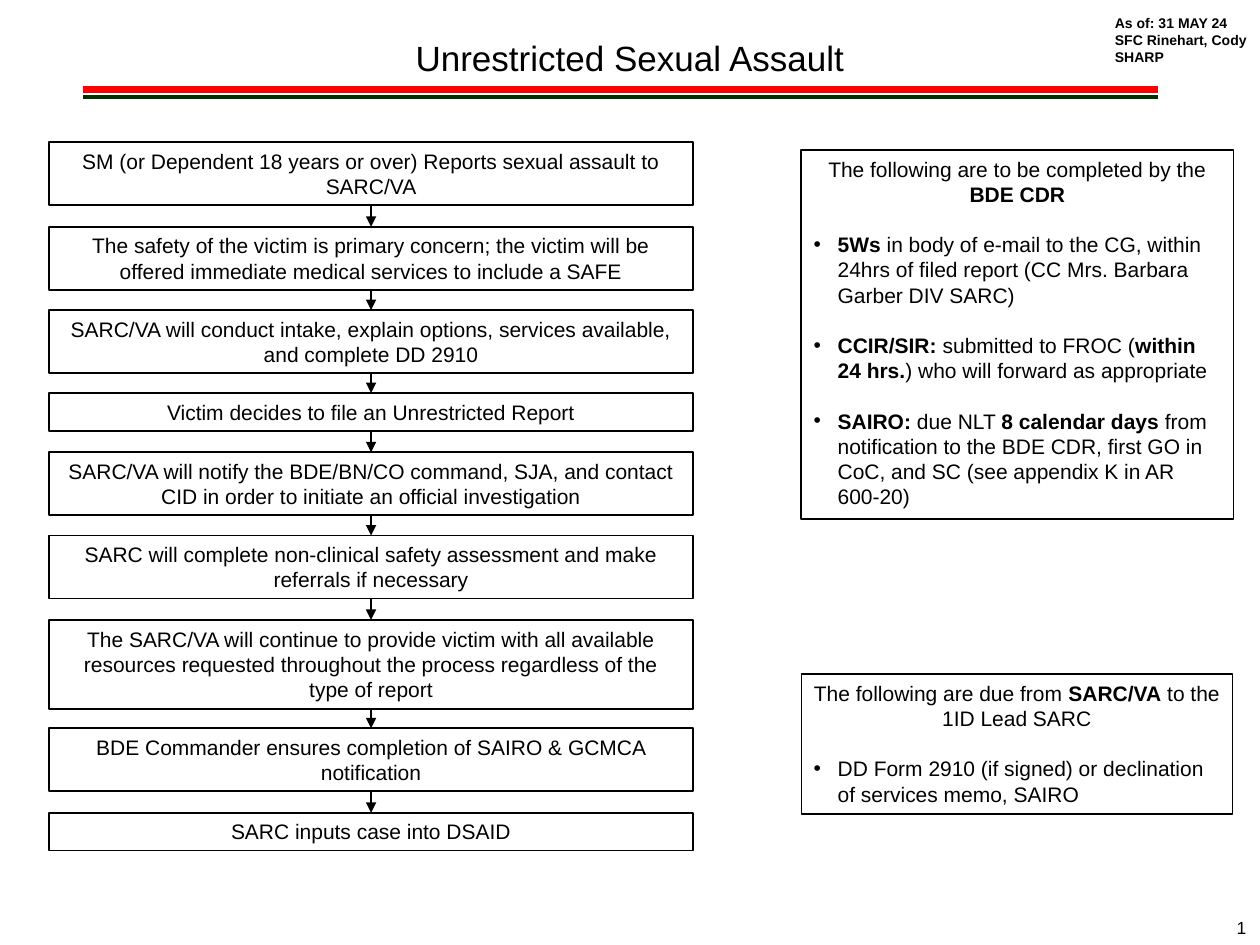
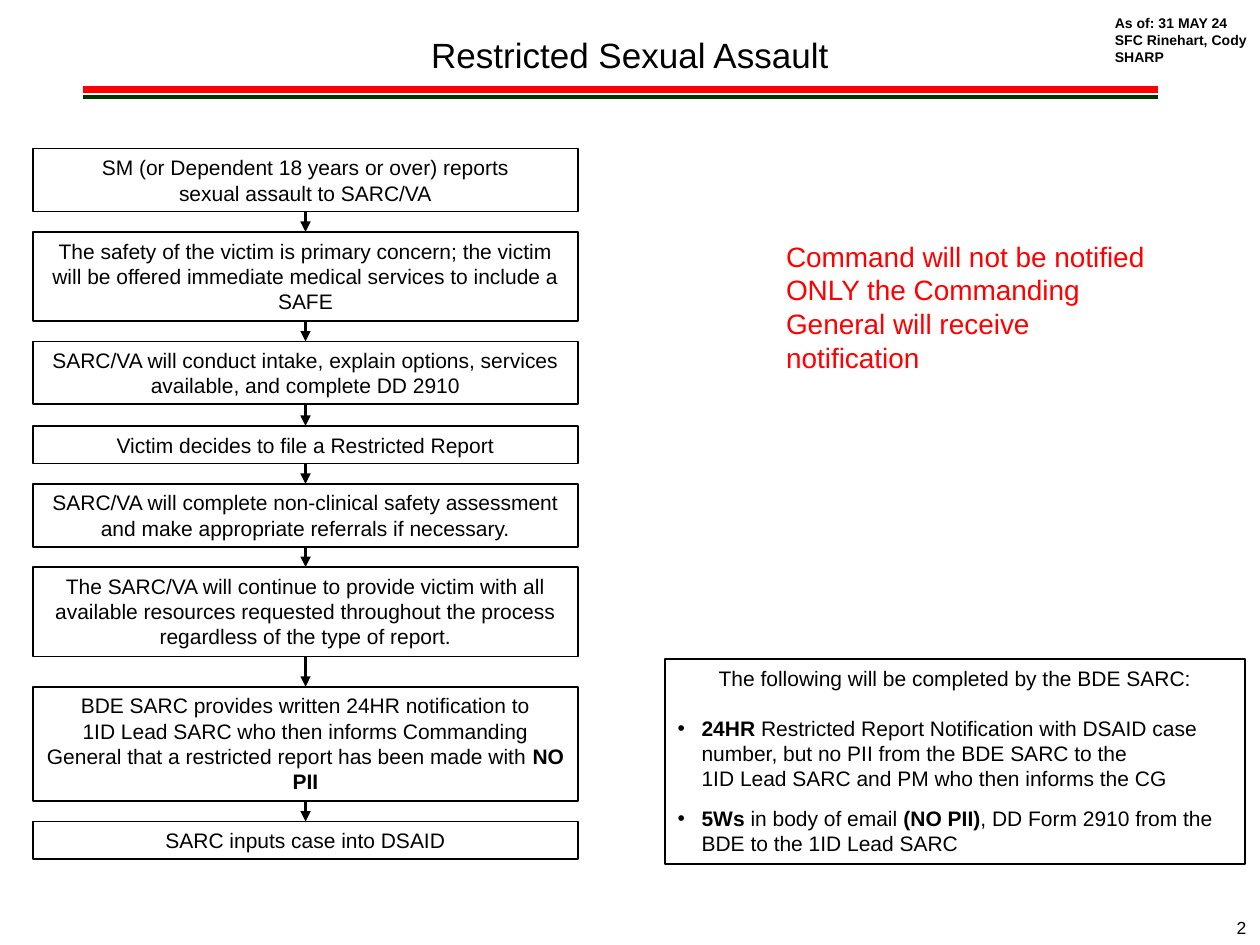
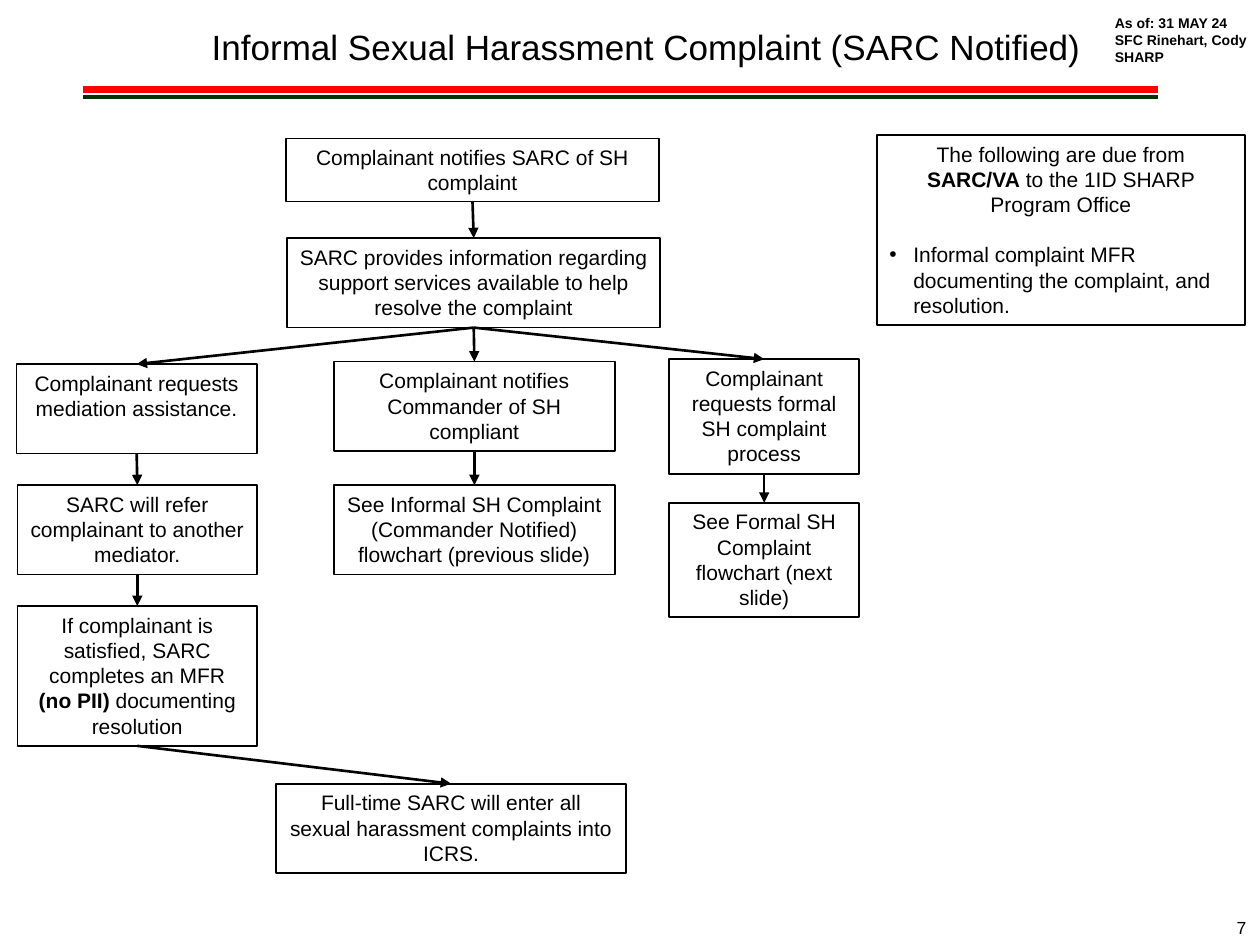
"""Builds three SHARP reporting flowchart slides."""
from dataclasses import dataclass
from typing import Any, Optional

from lxml import etree
from pptx import Presentation
from pptx.dml.color import RGBColor
from pptx.enum.shapes import MSO_CONNECTOR, MSO_SHAPE
from pptx.enum.text import MSO_ANCHOR, MSO_AUTO_SIZE, PP_ALIGN
from pptx.oxml.ns import qn
from pptx.util import Emu, Pt

SCALE = 9144
LEFT, CENTER, RIGHT = PP_ALIGN.LEFT, PP_ALIGN.CENTER, PP_ALIGN.RIGHT
TOP_ANCHOR = MSO_ANCHOR.TOP
GROW = MSO_AUTO_SIZE.SHAPE_TO_FIT_TEXT
RECTANGLE = MSO_SHAPE.RECTANGLE
STRAIGHT = MSO_CONNECTOR.STRAIGHT
TOP_SIDE, BOTTOM_SIDE = 0, 2
BLACK, RED, GREEN = "000000", "FF0000", "003300"
FONT = "Arial"
BLANK_LAYOUT = 6
STEP_GAP = 16
INDENT = 19
LINE_GAP = 14.4
SMALL_GAP = 8.4


@dataclass(frozen=True)
class Para:
    """A paragraph whose **marked** words are bold."""
    text: str
    align: Any = LEFT
    bullet: bool = False
    indent: int = 0
    before: float = 0


@dataclass(frozen=True)
class Style:
    """Text format of one box."""
    size: int = 12
    color: str = BLACK
    bold: bool = False
    wrap: bool = True


@dataclass(frozen=True)
class Box:
    """An area on the slide with its paragraphs and outline weight."""
    left: int
    top: int
    width: int
    height: int
    paras: tuple[Para, ...]
    weight: float = 1


@dataclass(frozen=True)
class Step:
    """A step in a vertical flow, sized by its number of lines."""
    lines: int
    texts: tuple[str, ...]
    extra_gap: int = 0


@dataclass(frozen=True)
class Band:
    """A coloured rule under the title."""
    top: int
    color: str
    weight: float


BODY = Style()
TITLE = Style(size=20)
STAMP = Style(size=8, bold=True, wrap=False)
NUMBER = Style(size=10)
NOTICE = Style(size=16, color=RED)
BANDS = (Band(71, RED, 4), Band(77, GREEN, 2.25))
STAMP_BOX = Box(875, 7, 126, 50, (
    Para("As of: 31 MAY 24"), Para("SFC Rinehart, Cody"), Para("SHARP")))

SAFETY = ("The safety of the victim is primary concern; the victim will be "
          "offered immediate medical services to include a SAFE",)
INTAKE = ("SARC/VA will conduct intake, explain options, services available, "
          "and complete DD 2910",)
RESOURCES = ("The SARC/VA will continue to provide victim with all available "
             "resources requested throughout the process regardless of the type of report")
DSAID = ("SARC inputs case into DSAID",)

UNRESTRICTED_STEPS = (
    Step(2, ("SM (or Dependent 18 years or over) Reports sexual assault to SARC/VA",)),
    Step(2, SAFETY),
    Step(2, INTAKE),
    Step(1, ("Victim decides to file an Unrestricted Report",)),
    Step(2, ("SARC/VA will notify the BDE/BN/CO command, SJA, and contact CID "
             "in order to initiate an official investigation",)),
    Step(2, ("SARC will complete non-clinical safety assessment and make "
             "referrals if necessary",)),
    Step(3, (RESOURCES,)),
    Step(2, ("BDE Commander ensures completion of SAIRO & GCMCA notification",)),
    Step(1, DSAID),
)
RESTRICTED_STEPS = (
    Step(2, ("SM (or Dependent 18 years or over) reports", "sexual assault to SARC/VA")),
    Step(3, SAFETY),
    Step(2, INTAKE),
    Step(1, ("Victim decides to file a Restricted Report",)),
    Step(2, ("SARC/VA will complete non-clinical safety assessment and make "
             "appropriate referrals if necessary.",)),
    Step(3, (RESOURCES + ".",)),
    Step(4, ("BDE SARC provides written 24HR notification to",
             "1ID Lead SARC who then informs Commanding General that a "
             "restricted report has been made with **NO PII**"), 8),
    Step(1, DSAID),
)


def item(text: str, before: float = LINE_GAP) -> Para:
    """Return a bulleted paragraph."""
    return Para(text, bullet=True, indent=INDENT, before=before)


def centred(*texts: str) -> tuple[Para, ...]:
    """Return centred paragraphs."""
    return tuple(Para(text, CENTER) for text in texts)


def step_height(lines: int) -> int:
    """Return the height of a box holding that many body lines."""
    return round(10 + 20.25 * lines)


def flow_box(left: int, top: int, width: int, lines: int, text: str) -> Box:
    """Return a centred flowchart box."""
    return Box(left, top, width, step_height(lines), centred(text))


COMMANDER_PANEL = Box(636, 119, 343, 293, (
    Para("The following are to be completed by the **BDE CDR**", CENTER),
    item("**5Ws** in body of e-mail to the CG, within 24hrs of filed report "
         "(CC Mrs. Barbara Garber DIV SARC)"),
    item("**CCIR/SIR: **submitted to FROC (**within 24 hrs.**) who will forward "
         "as appropriate"),
    item("**SAIRO:** due NLT **8 calendar days** from notification to the BDE CDR, "
         "first GO in CoC, and SC (see appendix K in AR 600-20)"),
))
LEAD_PANEL = Box(636, 535, 342, 111, (
    Para("The following are due from **SARC/VA** to the 1ID Lead SARC", CENTER),
    item("DD Form 2910 (if signed) or declination of services memo, SAIRO"),
), 0.75)
BRIGADE_PANEL = Box(528, 523, 460, 163, (
    Para("The following will be completed by the BDE SARC:", CENTER),
    item("**24HR** Restricted Report Notification with DSAID case number, "
         "but no PII from the BDE SARC to the"),
    Para("1ID Lead SARC and PM who then informs the CG", indent=INDENT),
    item("**5Ws** in body of email **(NO PII)**, DD Form 2910 from the BDE "
         "to the 1ID Lead SARC", SMALL_GAP),
))
OFFICE_PANEL = Box(696, 107, 292, 151, (
    Para("The following are due from **SARC/VA** to the 1ID SHARP Program Office", CENTER),
    item("Informal complaint MFR documenting the complaint, and resolution."),
))
NOTICE_BOX = Box(614, 185, 321, 118, (
    Para("Command will not be notified ONLY the Commanding General will "
         "receive notification"),))

COMPLAINT_BOXES = {
    "notify": flow_box(227, 110, 296, 2, "Complainant notifies SARC of SH complaint"),
    "inform": flow_box(228, 189, 296, 3, "SARC provides information regarding support "
                       "services available to help resolve the complaint"),
    "mediation": flow_box(13, 289, 191, 3,
                          "Complainant requests mediation assistance."),
    "commander": flow_box(265, 287, 223, 3,
                          "Complainant notifies Commander of SH compliant"),
    "formal": flow_box(531, 285, 151, 4,
                       "Complainant requests formal SH complaint process"),
    "refer": flow_box(14, 385, 190, 3,
                      "SARC will refer complainant to another mediator."),
    "satisfied": flow_box(14, 481, 190, 5, "If complainant is satisfied, SARC completes "
                          "an MFR **(no PII)** documenting resolution"),
    "see informal": flow_box(265, 385, 223, 3, "See Informal SH Complaint (Commander "
                             "Notified) flowchart (previous slide)"),
    "see formal": flow_box(531, 399, 151, 4,
                           "See Formal SH Complaint flowchart (next slide)"),
    "enter": flow_box(219, 622, 278, 3, "Full-time SARC will enter all sexual "
                      "harassment complaints into ICRS."),
}
COMPLAINT_LINKS = (
    ("notify", "inform"), ("inform", "mediation"), ("inform", "commander"),
    ("inform", "formal"), ("mediation", "refer"), ("refer", "satisfied"),
    ("commander", "see informal"), ("formal", "see formal"), ("satisfied", "enter"),
)


def px(length: int) -> Emu:
    """Turn px into EMU."""
    return Emu(length * SCALE)


def rgb(color: str) -> RGBColor:
    """Turn a hex string into a colour."""
    return RGBColor.from_string(color)


def apply(target: Any, values: dict[str, Any]) -> None:
    """Set each named attribute on the target."""
    for name, value in values.items():
        setattr(target, name, value)


def set_indent(paragraph: Any, para: Para) -> None:
    """Set the left margin and bullet of a paragraph."""
    properties = paragraph._p.get_or_add_pPr()
    properties.set("marL", str(px(para.indent)))
    if para.bullet:
        properties.set("indent", str(-px(para.indent)))
        etree.SubElement(properties, qn("a:buFont")).set("typeface", FONT)
        etree.SubElement(properties, qn("a:buChar")).set("char", "•")


def write_text(shape: Any, paras: tuple[Para, ...], style: Style) -> None:
    """Write formatted paragraphs into a shape."""
    frame = shape.text_frame
    apply(frame, {"word_wrap": style.wrap, "auto_size": GROW,
                  "vertical_anchor": TOP_ANCHOR})
    for index, para in enumerate(paras):
        paragraph = frame.add_paragraph() if index else frame.paragraphs[0]
        if para.indent:
            set_indent(paragraph, para)
        apply(paragraph, {"alignment": para.align, "space_before": Pt(para.before)})
        for position, text in enumerate(para.text.split("**")):
            if text:
                span = paragraph.add_run()
                span.text = text
                apply(span.font, {"name": FONT, "size": Pt(style.size),
                                  "bold": style.bold or position % 2 == 1})
                span.font.color.rgb = rgb(style.color)


def add_text(page: Any, box: Box, style: Style) -> None:
    """Add a plain text box."""
    shape = page.shapes.add_textbox(*map(px, (box.left, box.top, box.width, box.height)))
    write_text(shape, box.paras, style)


def add_box(page: Any, box: Box) -> Any:
    """Add an outlined rectangle with text."""
    shape = page.shapes.add_shape(
        RECTANGLE, *map(px, (box.left, box.top, box.width, box.height)))
    shape.shadow.inherit = False
    shape.fill.background()
    shape.line.color.rgb = rgb(BLACK)
    shape.line.width = Pt(box.weight)
    write_text(shape, box.paras, BODY)
    return shape


def add_line(page: Any, ends: tuple[int, int, int, int], color: str, weight: float) -> Any:
    """Add a straight line without shadow."""
    line = page.shapes.add_connector(STRAIGHT, *map(px, ends))
    line.line.color.rgb = rgb(color)
    line.line.width = Pt(weight)
    etree.SubElement(line._element.spPr, qn("a:effectLst"))
    return line


def add_arrow(page: Any, source: Any, target: Any) -> None:
    """Join the bottom of one box to the top of another."""
    arrow = add_line(page, (0, 0, 0, 0), BLACK, 1.5)
    arrow.begin_connect(source, BOTTOM_SIDE)
    arrow.end_connect(target, TOP_SIDE)
    etree.SubElement(arrow.line._get_or_add_ln(), qn("a:tailEnd")).set("type", "triangle")


def add_flow(page: Any, left: int, top: int, width: int, steps: tuple[Step, ...]) -> None:
    """Stack steps downwards and join them with arrows."""
    previous: Optional[Any] = None
    position: float = top
    for step in steps:
        position += step.extra_gap
        shape = add_box(page, Box(left, round(position), width, step_height(step.lines),
                                  centred(*step.texts)))
        if previous is not None:
            add_arrow(page, previous, shape)
        previous = shape
        position += 10 + 20.25 * step.lines + STEP_GAP


def add_page(deck: Any, title: str, left: int, top: int, number: int) -> Any:
    """Add a slide with the shared title, bands, stamp and number."""
    page = deck.slides.add_slide(deck.slide_layouts[BLANK_LAYOUT])
    for band in BANDS:
        add_line(page, (66, band.top, 919, band.top), band.color, band.weight)
    add_text(page, Box(left, top, 1000, 44, centred(title)), TITLE)
    add_text(page, STAMP_BOX, STAMP)
    add_text(page, Box(943, 723, 56, 27, (Para(str(number), RIGHT),)), NUMBER)
    return page


def build_unrestricted(deck: Any) -> None:
    """Build the unrestricted report slide."""
    page = add_page(deck, "Unrestricted Sexual Assault", 0, 24, 1)
    add_flow(page, 39, 113, 511, UNRESTRICTED_STEPS)
    add_box(page, COMMANDER_PANEL)
    add_box(page, LEAD_PANEL)


def build_restricted(deck: Any) -> None:
    """Build the restricted report slide."""
    page = add_page(deck, "Restricted Sexual Assault", 0, 22, 2)
    add_flow(page, 26, 118, 433, RESTRICTED_STEPS)
    add_box(page, BRIGADE_PANEL)
    add_text(page, NOTICE_BOX, NOTICE)


def build_complaint(deck: Any) -> None:
    """Build the informal complaint slide."""
    page = add_page(deck, "Informal Sexual Harassment Complaint (SARC Notified)", 13, 15, 7)
    shapes = {name: add_box(page, box) for name, box in COMPLAINT_BOXES.items()}
    for source, target in COMPLAINT_LINKS:
        add_arrow(page, shapes[source], shapes[target])
    add_box(page, OFFICE_PANEL)


def main() -> None:
    """Build and save the deck."""
    deck = Presentation()
    apply(deck, {"slide_width": px(1000), "slide_height": px(750)})
    build_unrestricted(deck)
    build_restricted(deck)
    build_complaint(deck)
    deck.save("out.pptx")


if __name__ == "__main__":
    main()
